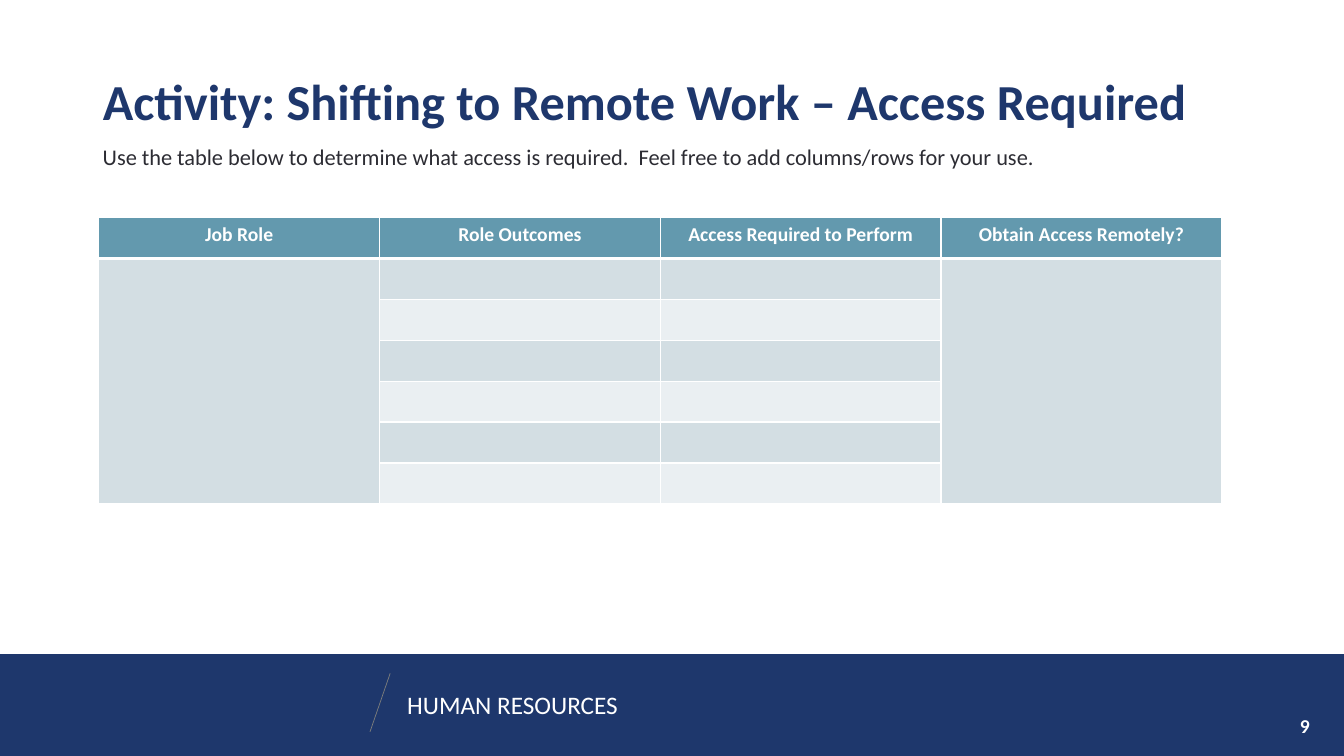
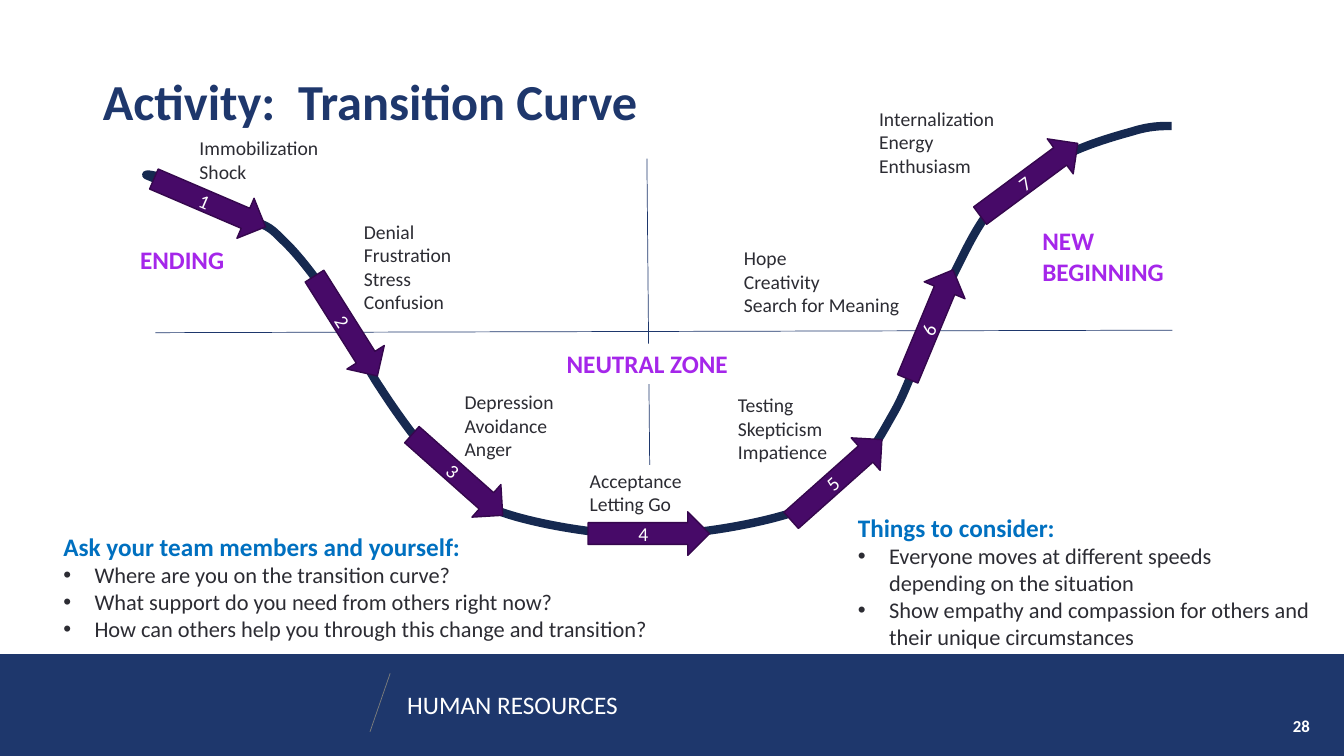
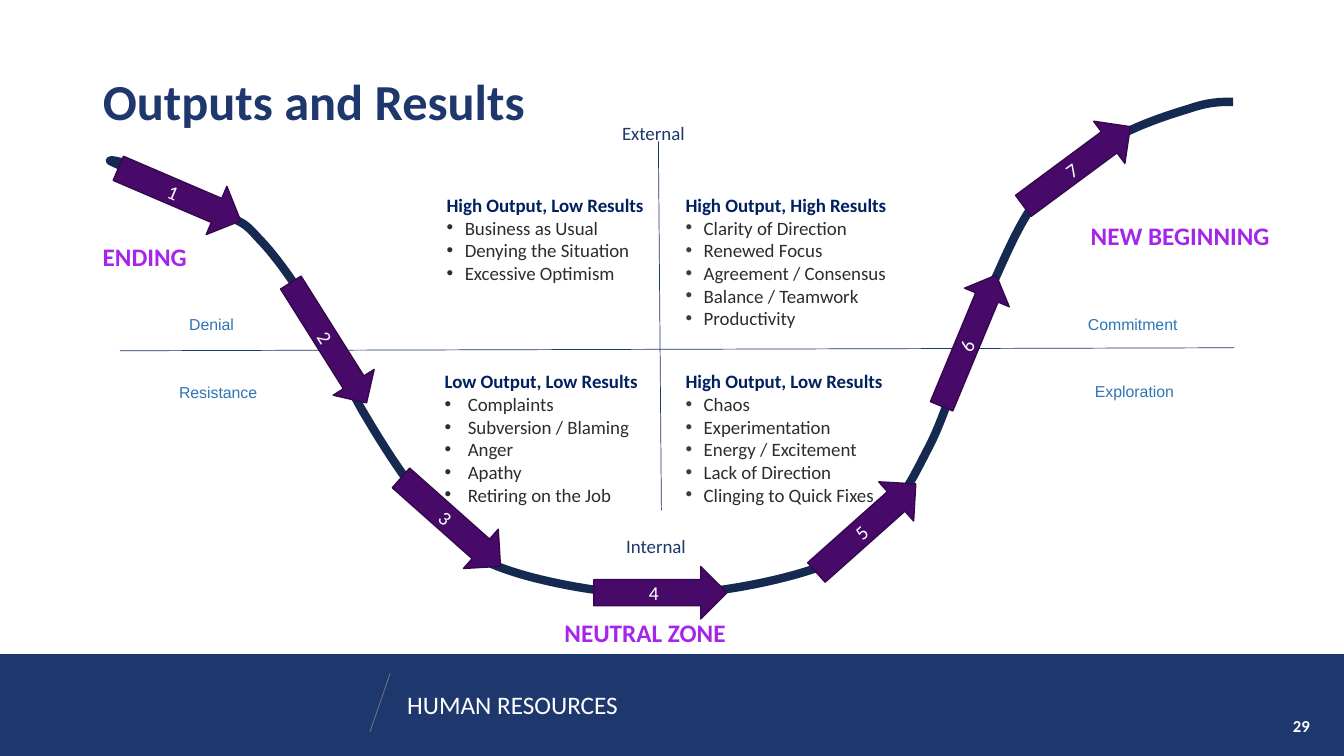
from dataclasses import dataclass

from lxml.etree import Element, SubElement
from pptx import Presentation
from pptx.dml.color import RGBColor
from pptx.enum.shapes import MSO_CONNECTOR as Connector, MSO_SHAPE as Preset
from pptx.enum.text import MSO_ANCHOR as Anchor, PP_ALIGN as Align
from pptx.oxml import parse_xml
from pptx.oxml.ns import nsdecls, qn
from pptx.util import Inches, Pt


@dataclass(frozen=True)
class Theme:
    navy: str = "1E376C"
    white: str = "FFFFFF"
    slash: str = "7E7E7C"
    curve: str = "162950"
    arrow: str = "470A68"
    arrow_edge: str = "35074D"
    bullet: str = "323F4F"
    header: str = "6399AE"
    bands: tuple = ("D3DEE3", "EAEFF2")
    # Type styles: font, size, colour, bold
    title: tuple = ("Calibri", 36, "1E376C", True)
    footer: tuple = ("Calibri", 18, "FFFFFF", False)
    big_number: tuple = ("Calibri", 14, "FFFFFF", True)
    number: tuple = ("Calibri", 12, "FFFFFF", True)
    column_head: tuple = ("Calibri", 14, "FFFFFF", True)
    body: tuple = ("Calibri", 16, "2C2C33", False)
    step: tuple = ("Calibri", 14, "FFFFFF", False)
    feeling: tuple = ("Calibri", 14, "2C2C33", False)
    phase: tuple = ("Calibri", 18, "A526EA", True)
    prompt: tuple = ("Calibri", 18, "0070C0", True)
    quadrant: tuple = ("Calibri", 13.5, "002060", True)
    outcome: tuple = ("Calibri", 13.5, "2C2C33", False)
    axis: tuple = ("Calibri", 13.5, "1E376C", False)
    stage: tuple = ("Arial", 11.25, "2E75B5", False)


theme = Theme()
COLUMNS, ROWS = 13.33, 7.5  # slide grid with one-inch cells


def grid(*cells):
    """Turn grid columns and rows into slide lengths."""
    return [Inches(cell) for cell in cells]


def write(frame, lines, style, bullet_style=None, indent=0.31, bullet_color=None,
          align=Align.LEFT, anchor=Anchor.TOP, inset=(0.1, 0.05), spacing=None):
    """Fill a text frame; with a bullet style, lines after the first are bullets."""
    sides, ends = grid(*inset)
    layout = dict(word_wrap=True, vertical_anchor=anchor, margin_left=sides,
                  margin_right=sides, margin_top=ends, margin_bottom=ends)
    for name, value in layout.items():
        setattr(frame, name, value)
    for index, line in enumerate(lines):
        paragraph = frame.add_paragraph() if index else frame.paragraphs[0]
        paragraph.alignment = align
        paragraph.line_spacing = spacing
        bulleted = index and bullet_style
        if bulleted:
            properties = paragraph._p.get_or_add_pPr()
            properties.set("marL", str(Inches(indent)))
            properties.set("indent", str(-Inches(indent)))
            if bullet_color:
                color = SubElement(properties, qn("a:buClr"))
                SubElement(color, qn("a:srgbClr"), val=bullet_color)
            SubElement(properties, qn("a:buFont"), typeface="Arial")
            SubElement(properties, qn("a:buChar"), char="•")
        run = paragraph.add_run()
        run.text = line
        family, size, color, bold = bullet_style if bulleted else style
        for name, value in dict(name=family, size=Pt(size), bold=bold).items():
            setattr(run.font, name, value)
        run.font.color.rgb = RGBColor.from_string(color)


presentation = Presentation()
presentation.slide_width, presentation.slide_height = grid(COLUMNS, ROWS)
title_only = presentation.slide_layouts[5]
title_box = dict(zip(("left", "top", "width", "height"), grid(0.92, 0.4, 11.49, 1.27)))
for name, value in title_box.items():
    setattr(title_only.placeholders[0], name, value)

# Slides with title and number
slides = []
for title, number, number_style in (
    ("Activity: Shifting to Remote Work – Access Required", "9", theme.big_number),
    ("Activity:  Transition Curve", "28", theme.number),
    ("Outputs and Results", "29", theme.number),
):
    slide = presentation.slides.add_slide(title_only)
    write(slide.shapes.title.text_frame, [title], theme.title, anchor=Anchor.MIDDLE, spacing=0.9)
    number_box = slide.shapes.add_textbox(*grid(11.74, 7, 1.35, 0.4))
    write(number_box.text_frame, [number], number_style, align=Align.RIGHT, anchor=Anchor.MIDDLE)
    slides.append(slide)
access, transition, outputs = slides

# Footer band and its label, kept on the layout
band = access.shapes.add_shape(Preset.RECTANGLE, *grid(0, 6.49, COLUMNS, ROWS - 6.49))
band.shadow.inherit = False
band.fill.solid()
band.fill.fore_color.rgb = RGBColor.from_string(theme.navy)
band.line.fill.background()
department = access.shapes.add_textbox(*grid(3.94, 6.79, 3.45, 0.4))
write(department.text_frame, ["HUMAN RESOURCES"], theme.footer)

# Thin lines: footer slash and the axes, which scale with the curve
BASE = (1.09, 1.01, 11.14, 4.89)
AXES = (((6.53, 1.4), (6.56, 5.06)), ((1.19, 3.48), (12.24, 3.45)))
curve_boxes = ((transition, (1.45, 1.25, 10.17, 4.06)), (outputs, BASE))
thin_lines = [(access, (3.67, 7.26, 3.87, 6.68), theme.slash)]
for slide, (left, top, width, height) in curve_boxes:
    for axis in AXES:
        ends = [value for x, y in axis for value in (
            left + (x - BASE[0]) * width / BASE[2], top + (y - BASE[1]) * height / BASE[3])]
        thin_lines.append((slide, ends, theme.navy))
for slide, ends, color in thin_lines:
    line = slide.shapes.add_connector(Connector.STRAIGHT, *grid(*ends))
    line.line.color.rgb = RGBColor.from_string(color)
    line.line.width = Pt(0.5)
    SubElement(line.element.spPr, qn("a:effectLst"))
    if slide is access:
        for shape in (band, department, line):
            title_only.shapes.element.append(shape.element)

# Curve as cubic segments: a start, then two handles and an end each
CURVE = (
    (1.3, 1.72),
    (1.46, 1.64), (0.97, 1.55), (1.12, 1.61), (1.27, 1.68), (1.93, 1.97), (2.17, 2.1),
    (2.41, 2.22), (2.41, 2.19), (2.56, 2.36), (2.72, 2.52), (2.92, 2.8), (3.1, 3.1),
    (3.28, 3.39), (3.43, 3.81), (3.64, 4.15), (3.84, 4.49), (4.1, 4.88), (4.33, 5.13),
    (4.56, 5.38), (4.64, 5.52), (5.02, 5.65), (5.39, 5.78), (6.07, 5.91), (6.59, 5.9),
    (7.11, 5.89), (7.76, 5.76), (8.14, 5.62), (8.51, 5.48), (8.64, 5.27), (8.82, 5.07),
    (9, 4.87), (9.09, 4.67), (9.21, 4.44), (9.33, 4.21), (9.4, 3.97), (9.52, 3.68),
    (9.63, 3.39), (9.76, 3), (9.9, 2.7), (10.03, 2.41), (10.16, 2.12), (10.35, 1.9),
    (10.54, 1.67), (10.8, 1.52), (11.04, 1.38), (11.28, 1.24), (11.59, 1.14), (11.79, 1.08),
    (11.99, 1.01), (12.11, 1.01), (12.23, 1.01),
)
# Arrow centre and turn; the steep ones stretch with the height
ARROWS = ((1.78, 1.93, 23.2), (3.26, 3.4, 57.8), (4.47, 5.18, 41.6), (6.55, 5.88, 0),
          (8.59, 5.24, 318.3), (9.61, 3.38, 292.6), (10.68, 1.65, 323.5))
STEEP = (57.8, 292.6)

for slide, (left, top, width, height) in curve_boxes:
    across, down = width / BASE[2], height / BASE[3]
    points = [grid(left + (x - BASE[0]) * across, top + (y - BASE[1]) * down)
              for x, y in CURVE]
    outline = slide.shapes.build_freeform(*points[0])
    outline.add_line_segments(points[3::3], close=False)
    curve = outline.convert_to_shape()
    curve.shadow.inherit = False
    curve.fill.background()
    curve.line.color.rgb = RGBColor.from_string(theme.curve)
    curve.line.width = Pt(6)
    # Bend each straight segment by adding its two handles
    for index, segment in enumerate(list(curve.element.iter(qn("a:lnTo")))):
        segment.tag = qn("a:cubicBezTo")
        for position, (x, y) in enumerate(points[3 * index + 1:3 * index + 3]):
            segment.insert(position, Element(
                qn("a:pt"), x=str(x - curve.left), y=str(y - curve.top)))

    for step, (x, y, turn) in enumerate(ARROWS, 1):
        length, thickness = ((1.41 * down, 0.48 * across) if turn in STEEP
                             else (1.32 * across, 0.52 * down))
        x, y = left + (x - BASE[0]) * across, top + (y - BASE[1]) * down
        arrow = slide.shapes.add_shape(Preset.RIGHT_ARROW, *grid(
            x - length / 2, y - thickness / 2, length, thickness))
        arrow.rotation = turn
        arrow.shadow.inherit = False
        arrow.fill.solid()
        arrow.fill.fore_color.rgb = RGBColor.from_string(theme.arrow)
        arrow.line.color.rgb = RGBColor.from_string(theme.arrow_edge)
        arrow.line.width = Pt(1)
        write(arrow.text_frame, [str(step)], theme.step, align=Align.CENTER, anchor=Anchor.MIDDLE)

# Text boxes: slide, box, lines, style, further formats
prompts = dict(bullet_style=theme.body)
small = dict(inset=(0.07, 0.04))
left_list = dict(small, bullet_style=theme.outcome, indent=0.18)
wide_list = dict(left_list, indent=0.23)
right_list = dict(left_list, bullet_color=theme.bullet)
right_small = dict(small, align=Align.RIGHT)
texts = (
    (access, (0.92, 1.39, 11.49, 4.16),
     ["Use the table below to determine what access is required.  Feel free to add "
      "columns/rows for your use."], theme.body, dict(spacing=0.95)),
    # Feelings along the curve
    (transition, (1.88, 1.3, 1.58, 0.49), ["Immobilization", "Shock"], theme.feeling, {}),
    (transition, (3.51, 2.13, 1.58, 0.89), ["Denial", "Frustration", "Stress", "Confusion"],
     theme.feeling, {}),
    (transition, (4.51, 3.82, 1.58, 0.69), ["Depression", "Avoidance", "Anger"],
     theme.feeling, {}),
    (transition, (5.75, 4.6, 1.58, 0.49), ["Acceptance", "Letting Go"], theme.feeling, {}),
    (transition, (7.22, 3.85, 1.58, 0.69), ["Testing", "Skepticism", "Impatience"],
     theme.feeling, {}),
    (transition, (7.28, 2.39, 1.95, 0.69), ["Hope", "Creativity", "Search for Meaning"],
     theme.feeling, {}),
    (transition, (8.62, 1.01, 1.58, 0.69), ["Internalization", "Energy", "Enthusiasm"],
     theme.feeling, {}),
    # Phases
    (transition, (1.29, 2.37, 1.58, 0.4), ["ENDING"], theme.phase, {}),
    (transition, (10.24, 2.19, 1.81, 0.71), ["NEW BEGINNING"], theme.phase, {}),
    (outputs, (0.92, 2.34, 1.73, 0.42), ["ENDING"], theme.phase, {}),
    (outputs, (10.72, 2.14, 2, 0.71), ["NEW BEGINNING"], theme.phase, {}),
    (outputs, (5.5, 6.07, 2.33, 0.42), ["NEUTRAL ZONE"], theme.phase, {}),
    # Prompts
    (transition, (0.53, 5.22, 6.4, 1.21),
     ["Ask your team members and yourself:", "Where are you on the transition curve?",
      "What support do you need from others right now?",
      "How can others help you through this change and transition?"], theme.prompt, prompts),
    (transition, (8.41, 5.03, 4.69, 1.48),
     ["Things to consider:", "Everyone moves at different speeds depending on the situation",
      "Show empathy and compassion for others and their unique circumstances"],
     theme.prompt, prompts),
    # Quadrants
    (outputs, (4.36, 1.88, 2.76, 0.98),
     ["High Output, Low Results", "Business as Usual", "Denying the Situation",
      "Excessive Optimism"], theme.quadrant, left_list),
    (outputs, (6.73, 1.88, 2.86, 1.46),
     ["High Output, High Results", "Clarity of Direction", "Renewed Focus",
      "Agreement / Consensus", "Balance / Teamwork", "Productivity"],
     theme.quadrant, right_list),
    (outputs, (4.34, 3.63, 2.2, 1.44),
     ["Low Output, Low Results", "Complaints", "Subversion / Blaming", "Anger", "Apathy",
      "Retiring on the Job"], theme.quadrant, wide_list),
    (outputs, (6.73, 3.63, 2.76, 1.44),
     ["High Output, Low Results", "Chaos", "Experimentation", "Energy / Excitement",
      "Lack of Direction", "Clinging to Quick Fixes"], theme.quadrant, right_list),
    # Axis ends and stages
    (outputs, (6.1, 1.17, 1.03, 0.3), ["External"], theme.axis, small),
    (outputs, (6.14, 5.26, 0.99, 0.3), ["Internal"], theme.axis, small),
    (outputs, (1.59, 3.08, 0.8, 0.27), ["Denial"], theme.stage, right_small),
    (outputs, (1.37, 3.76, 1.25, 0.27), ["Resistance"], theme.stage, right_small),
    (outputs, (10.72, 3.08, 1.4, 0.27), ["Commitment"], theme.stage, small),
    (outputs, (10.79, 3.75, 1.26, 0.27), ["Exploration"], theme.stage, small),
)
for slide, box, lines, style, formats in texts:
    write(slide.shapes.add_textbox(*grid(*box)).text_frame, lines, style, **formats)

# Neutral zone label, which covers the vertical axis
neutral = transition.shapes.add_shape(Preset.RECTANGLE, *grid(5.36, 3.41, 2.12, 0.4))
neutral.shadow.inherit = False
neutral.fill.solid()
neutral.fill.fore_color.rgb = RGBColor.from_string(theme.white)
neutral.line.fill.background()
write(neutral.text_frame, ["NEUTRAL ZONE"], theme.phase, align=Align.CENTER)

# Access table
HEADS = ("Job Role", "Role Outcomes", "Access Required to Perform", "Obtain Access Remotely?")
TABLE_ROWS = 7
table = access.shapes.add_table(TABLE_ROWS, len(HEADS), *grid(0.98, 2.16, 11.14, 2.84)).table
for row in range(TABLE_ROWS):
    for column, head in enumerate(HEADS):
        cell = table.cell(row, column)
        fill = theme.bands[(row - 1) % 2] if row else theme.header
        cell.fill.solid()
        cell.fill.fore_color.rgb = RGBColor.from_string(fill)
        if row == 0:
            write(cell.text_frame, [head], theme.column_head, align=Align.CENTER)
        widths = dict(lnL=1, lnR=1, lnT=3 if row == 1 else 1, lnB=3 if row == 0 else 1)
        for position, (side, points) in enumerate(widths.items()):
            cell._tc.get_or_add_tcPr().insert(position, parse_xml(
                f'<a:{side} {nsdecls("a")} w="{Pt(points)}"><a:solidFill>'
                f'<a:srgbClr val="{theme.white}"/></a:solidFill></a:{side}>'))
for column in (0, len(HEADS) - 1):
    table.cell(1, column).merge(table.cell(TABLE_ROWS - 1, column))

presentation.save("out.pptx")
